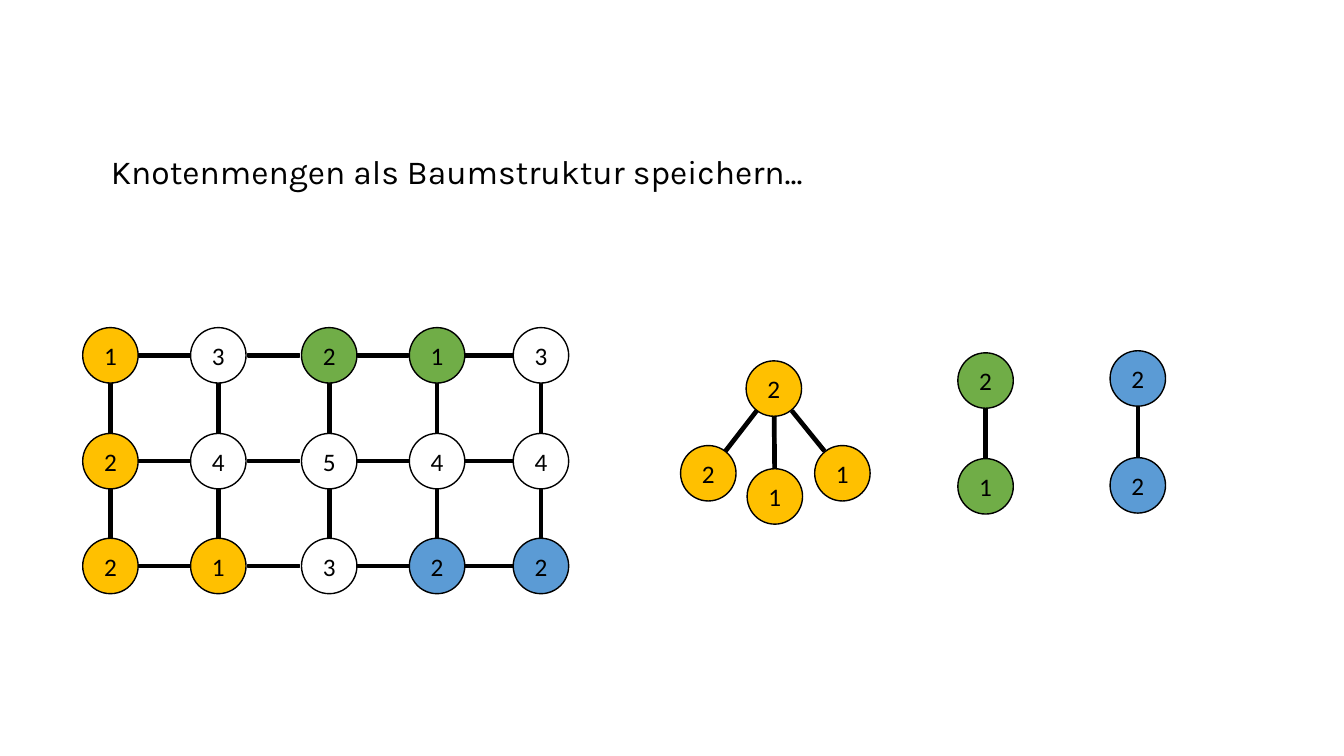
import math

from pptx import Presentation
from pptx.dml.color import RGBColor
from pptx.enum import shapes, text
from pptx.util import Inches, Pt

BLACK = RGBColor(0x00, 0x00, 0x00)
WHITE = RGBColor(0xFF, 0xFF, 0xFF)
YELLOW = RGBColor(0xFF, 0xC0, 0x00)
GREEN = RGBColor(0x70, 0xAD, 0x47)
BLUE = RGBColor(0x5B, 0x9B, 0xD5)

COLUMNS = [0.82, 1.89, 2.99, 4.06, 5.09]
ROWS = [3.25, 4.3, 5.34]
GRID = [
    [(1, YELLOW), (3, WHITE), (2, GREEN), (1, GREEN), (3, WHITE)],
    [(2, YELLOW), (4, WHITE), (5, WHITE), (4, WHITE), (4, WHITE)],
    [(2, YELLOW), (1, YELLOW), (3, WHITE), (2, BLUE), (2, BLUE)],
]
# Colour, root and children of each tree; nodes are (value, left, top)
TREES = [
    (YELLOW, (2, 7.4, 3.58), [(2, 6.75, 4.42), (1, 7.41, 4.65), (1, 8.08, 4.42)]),
    (GREEN, (2, 9.5, 3.5), [(1, 9.5, 4.55)]),
    (BLUE, (2, 11.01, 3.48), [(2, 11.01, 4.54)]),
]


class GraphSlide:
    NODE_SIZE = 0.55
    EDGE_LENGTH = 0.69
    EDGE_HEIGHT = 0.14
    EDGE_THICKNESS = 0.235

    def __init__(self, slide):
        self.slide = slide

    def heading(self, wording, left, top, width, height):
        box = self.slide.shapes.add_textbox(
            Inches(left), Inches(top), Inches(width), Inches(height))
        box.text_frame.word_wrap = True
        self.label(box, wording, "Karla", 24)

    def label(self, shape, wording, font_name, size):
        paragraph = shape.text_frame.paragraphs[0]
        paragraph.text = wording
        paragraph.font.name = font_name
        paragraph.font.size = Pt(size)
        paragraph.font.color.rgb = BLACK
        return paragraph

    def outlined(self, preset, left, top, width, height, fill):
        shape = self.slide.shapes.add_shape(
            preset, Inches(left), Inches(top), Inches(width), Inches(height))
        shape.shadow.inherit = False
        shape.fill.solid()
        shape.fill.fore_color.rgb = fill
        shape.line.color.rgb = BLACK
        shape.line.width = Pt(1)
        return shape

    def node(self, value, left, top, fill):
        circle = self.outlined(shapes.MSO_SHAPE.OVAL, left, top,
                               self.NODE_SIZE, self.NODE_SIZE, fill)
        circle.text_frame.vertical_anchor = text.MSO_ANCHOR.MIDDLE
        number = self.label(circle, str(value), "Calibri", 18)
        number.alignment = text.PP_ALIGN.CENTER

    def edge(self, start, end):
        """Centre a bar between two nodes given by their left and top."""
        (x1, y1), (x2, y2) = start, end
        left = (x1 + x2 + self.NODE_SIZE - self.EDGE_LENGTH) / 2
        top = (y1 + y2 + self.NODE_SIZE - self.EDGE_HEIGHT) / 2
        bar = self.outlined(shapes.MSO_SHAPE.MATH_MINUS, left, top,
                            self.EDGE_LENGTH, self.EDGE_HEIGHT, BLACK)
        bar.adjustments[0] = self.EDGE_THICKNESS
        bar.rotation = math.degrees(math.atan2(y2 - y1, x2 - x1))

    def grid(self):
        for top in ROWS:
            for left, right in zip(COLUMNS, COLUMNS[1:]):
                self.edge((left, top), (right, top))
        for left in COLUMNS:
            for top, bottom in zip(ROWS, ROWS[1:]):
                self.edge((left, top), (left, bottom))
        for top, row in zip(ROWS, GRID):
            for left, (value, fill) in zip(COLUMNS, row):
                self.node(value, left, top, fill)

    def tree(self, fill, root, children):
        for child in children:
            self.edge(root[1:], child[1:])
        for value, left, top in [root, *children]:
            self.node(value, left, top, fill)


def main():
    deck = Presentation()
    deck.slide_width, deck.slide_height = Inches(13.33), Inches(7.5)
    graph = GraphSlide(deck.slides.add_slide(deck.slide_layouts[6]))
    graph.heading("Knotenmengen als Baumstruktur speichern...", 1, 1.45, 11.35, 0.5)
    graph.grid()
    for fill, root, children in TREES:
        graph.tree(fill, root, children)
    deck.save("out.pptx")


if __name__ == "__main__":
    main()
